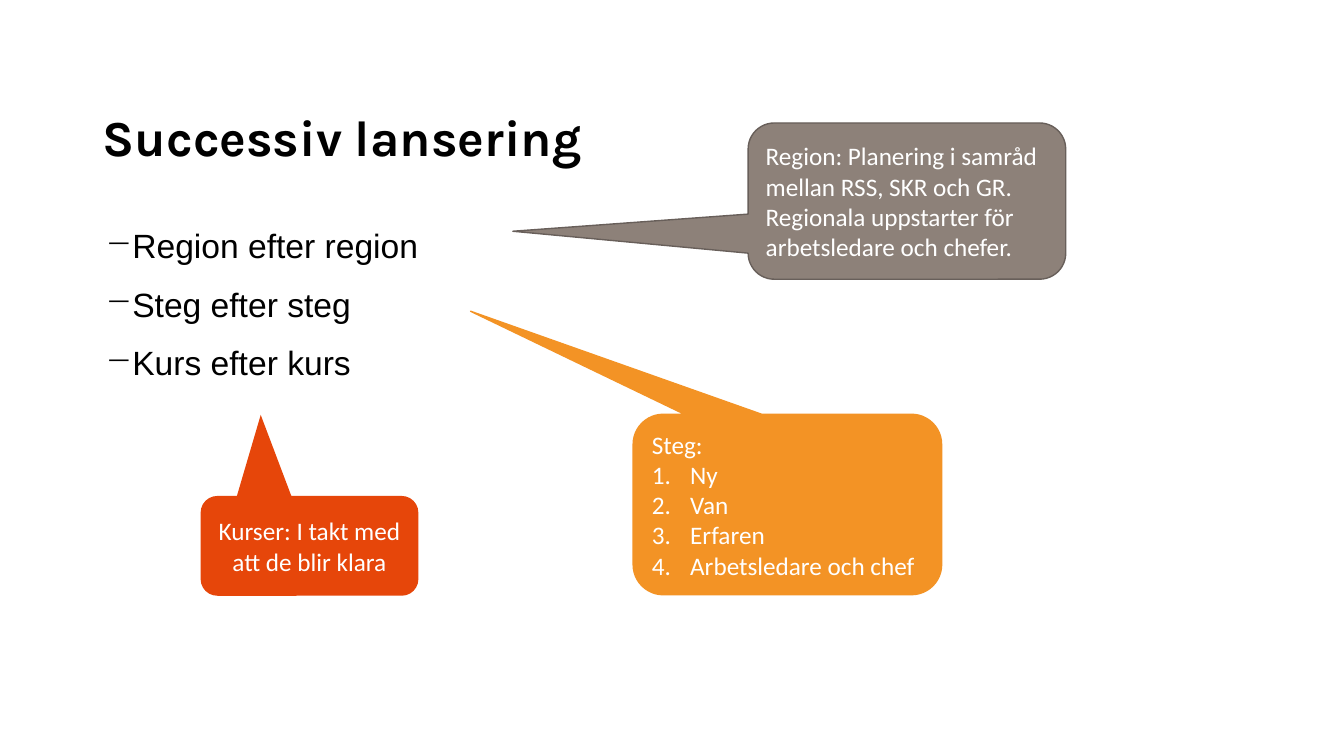
import pptx
import pptx.util
import pptx.oxml.ns
import pptx.dml.color
import pptx.enum.shapes
import pptx.enum.text
import lxml.etree

RGB = pptx.dml.color.RGBColor
BLACK, WHITE = RGB(0, 0, 0), RGB(0xFF, 0xFF, 0xFF)
ORANGE, RED = RGB(0xF3, 0x93, 0x25), RGB(0xE6, 0x46, 0x0A)
TAUPE, DARK_TAUPE = RGB(0x8D, 0x81, 0x79), RGB(0x68, 0x5F, 0x5A)
ALIGN, ANCHOR = pptx.enum.text.PP_ALIGN, pptx.enum.text.MSO_ANCHOR
W, H = 13.33, 7.5

# Content
TITLE = "Successiv lansering"
POINTS = ["Region efter region", "Steg efter steg", "Kurs efter kurs"]
STEPS = ["Ny", "Van", "Erfaren", "Arbetsledare och chef"]
# Callouts: lead text, numbered items, box, pointer tip, fill, line, alignment
CALLOUTS = [
    ("Steg:", STEPS, (6.28, 4.11, 3.06, 1.79), (-1.027, -1.071),
     ORANGE, ORANGE, ALIGN.LEFT),
    ("Kurser: I takt med att de blir klara", [], (1.99, 4.92, 2.16, 0.99),
     (-0.224, -1.312), RED, None, ALIGN.CENTER),
    ("Region: Planering i samråd mellan RSS, SKR och GR. "
     "Regionala uppstarter för arbetsledare och chefer.", [],
     (7.42, 1.22, 3.15, 1.55), (-1.241, 0.193), TAUPE, DARK_TAUPE, ALIGN.LEFT),
]

# Left column, as shares of the slide
LEFT, COLUMN = 0.069 * W, 0.425 * W
TITLE_BOX = (LEFT, 0.127 * H, COLUMN, 0.107 * H)
POINTS_BOX = (LEFT, 0.289 * H, COLUMN, 0.531 * H)


def inches(box):
    return [pptx.util.Inches(v) for v in box]


def add_bullet(p, tag, margin, hanging, **attrs):
    pPr = p._p.get_or_add_pPr()
    pPr.set("marL", str(pptx.util.Inches(margin)))
    pPr.set("indent", str(-pptx.util.Inches(hanging)))
    lxml.etree.SubElement(pPr, pptx.oxml.ns.qn("a:" + tag), attrs)


def style(p, font, size, color, bold=False):
    for r in p.runs:
        r.font.name, r.font.size, r.font.bold = font, pptx.util.Pt(size), bold
        r.font.color.rgb = color


def add_text(s, lines, box, anchor):
    tf = s.shapes.add_textbox(*inches(box)).text_frame
    tf.word_wrap = True
    tf.vertical_anchor = anchor
    tf.text = "\n".join(lines)
    for p in tf.paragraphs:
        p.space_after = pptx.util.Pt(12)
    return tf.paragraphs


def add_callout(s, lead, items, box, tip, fill, line, align):
    sp = s.shapes.add_shape(
        pptx.enum.shapes.MSO_SHAPE.ROUNDED_RECTANGULAR_CALLOUT, *inches(box))
    sp.shadow.inherit = False
    for i, value in enumerate((*tip, 0.167)):
        sp.adjustments[i] = value
    sp.fill.solid()
    sp.fill.fore_color.rgb = fill
    if line is None:
        sp.line.fill.background()
    else:
        sp.line.color.rgb = line
        sp.line.width = pptx.util.Pt(1)
    tf = sp.text_frame
    tf.word_wrap = True
    tf.vertical_anchor = ANCHOR.MIDDLE
    tf.text = "\n".join([lead, *items])
    for i, p in enumerate(tf.paragraphs):
        p.alignment = align
        if i:
            add_bullet(p, "buAutoNum", 0.38, 0.38, type="arabicPeriod")
        style(p, "Calibri", 18, WHITE)


def main():
    prs = pptx.Presentation()
    prs.slide_width, prs.slide_height = inches((W, H))
    s = prs.slides.add_slide(prs.slide_layouts[6])

    # Title
    for p in add_text(s, [TITLE], TITLE_BOX, ANCHOR.MIDDLE):
        style(p, "Karla", 36, BLACK, bold=True)

    # Dashed list
    for p in add_text(s, POINTS, POINTS_BOX, ANCHOR.TOP):
        p.line_spacing = 1.04
        add_bullet(p, "buChar", 0.28, 0.25, char="−")
        style(p, "Arial", 24, BLACK)

    # Callouts
    for callout in CALLOUTS:
        add_callout(s, *callout)

    prs.save("out.pptx")


if __name__ == "__main__":
    main()
